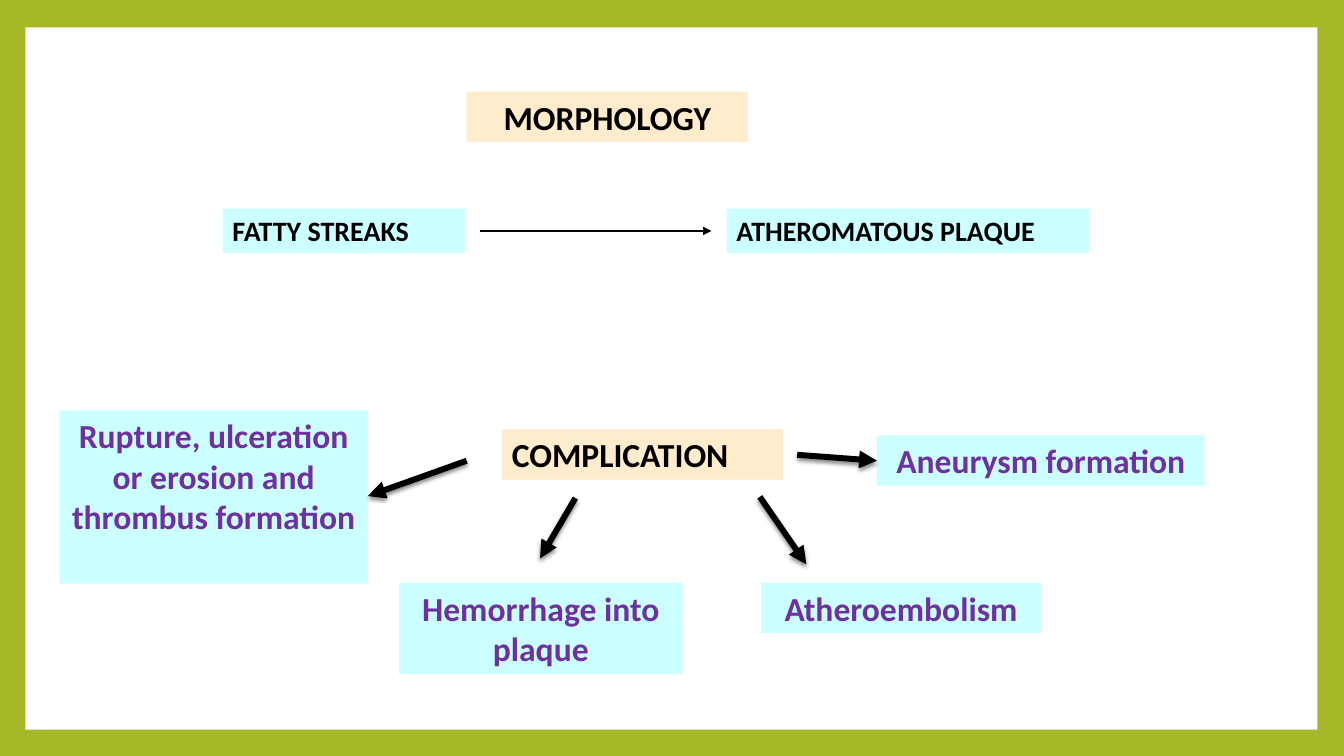
from dataclasses import dataclass

from lxml import etree
from pptx import Presentation
from pptx import util as u
from pptx.dml.color import RGBColor
from pptx.enum import shapes, text
from pptx.oxml.ns import qn
from pptx.slide import Slide

COLORS = {
    "green": "A6B727",
    "white": "FFFFFF",
    "cream": "FFECCC",
    "aqua": "CCFFFF",
    "black": "000000",
    "purple": "7030A0",
}


@dataclass
class Label:
    words: str
    left: float
    top: float
    width: float
    height: float
    fill: str = "aqua"
    ink: str = "purple"
    size: int = 24
    center: bool = True


@dataclass
class Arrow:
    x1: float
    y1: float
    x2: float
    y2: float
    weight: float = 4.25
    shadow: bool = True


LABELS = [
    Label("MORPHOLOGY", 11.76, 2.31, 7.09, 1.27, "cream", "black"),
    Label("FATTY STREAKS", 5.61, 5.26, 6.12, 1.12, "aqua", "black", 20, False),
    Label("ATHEROMATOUS PLAQUE", 18.31, 5.26, 9.14, 1.12, "aqua", "black", 20, False),
    Label("COMPLICATION", 12.65, 10.82, 7.09, 1.27, "cream", "black", 24, False),
    Label("Rupture, ulceration or erosion and thrombus formation", 1.5, 10.34, 7.77, 4.37),
    Label("Hemorrhage into plaque", 10.06, 14.68, 7.14, 2.31),
    Label("Atheroembolism", 19.18, 14.68, 7.06, 1.27),
    Label("Aneurysm formation", 22.1, 10.97, 8.26, 1.27),
]

ARROWS = [
    Arrow(11.76, 11.61, 9.27, 12.5),
    Arrow(14.5, 12.55, 13.61, 14.07),
    Arrow(19.15, 12.52, 20.32, 14.22),
    Arrow(20.09, 11.46, 22.1, 11.61),
    Arrow(12.09, 5.82, 17.93, 5.82, 1.5, False),
]


def color(name: str) -> RGBColor:
    return RGBColor.from_string(COLORS[name])


def add_frame(slide: Slide) -> None:
    slide.background.fill.solid()
    slide.background.fill.fore_color.rgb = color("green")
    panel = slide.shapes.add_shape(
        shapes.MSO_SHAPE.RECTANGLE, u.Cm(0.64), u.Cm(0.69), u.Cm(32.56), u.Cm(17.7)
    )
    panel.shadow.inherit = False
    panel.fill.solid()
    panel.fill.fore_color.rgb = color("white")
    panel.line.fill.background()


def add_label(slide: Slide, label: Label) -> None:
    box = slide.shapes.add_textbox(
        u.Cm(label.left), u.Cm(label.top), u.Cm(label.width), u.Cm(label.height)
    )
    box.fill.solid()
    box.fill.fore_color.rgb = color(label.fill)
    box.text_frame.word_wrap = True
    line = box.text_frame.paragraphs[0]
    line.text = label.words
    line.alignment = text.PP_ALIGN.CENTER if label.center else text.PP_ALIGN.LEFT
    line.font.name = "Calibri"
    line.font.size = u.Pt(label.size)
    line.font.bold = True
    line.font.color.rgb = color(label.ink)


def add_arrow(slide: Slide, arrow: Arrow) -> None:
    link = slide.shapes.add_connector(
        shapes.MSO_CONNECTOR.STRAIGHT,
        u.Cm(arrow.x1), u.Cm(arrow.y1), u.Cm(arrow.x2), u.Cm(arrow.y2),
    )
    link.line.width = u.Pt(arrow.weight)
    link.line.color.rgb = color("black")
    props = link._element.spPr
    etree.SubElement(props.find(qn("a:ln")), qn("a:tailEnd"), type="triangle")
    effects = etree.SubElement(props, qn("a:effectLst"))
    if arrow.shadow:
        shade = etree.SubElement(
            effects, qn("a:outerShdw"), blurRad=str(u.Pt(3)), dist=str(u.Pt(2)),
            dir="5400000", rotWithShape="0",
        )
        tint = etree.SubElement(shade, qn("a:srgbClr"), val=COLORS["black"])
        etree.SubElement(tint, qn("a:alpha"), val="45000")


def main() -> None:
    deck = Presentation()
    deck.slide_width = u.Cm(33.87)
    deck.slide_height = u.Cm(19.05)
    slide = deck.slides.add_slide(deck.slide_layouts[6])
    add_frame(slide)
    for label in LABELS:
        add_label(slide, label)
    for arrow in ARROWS:
        add_arrow(slide, arrow)
    deck.save("out.pptx")


if __name__ == "__main__":
    main()
